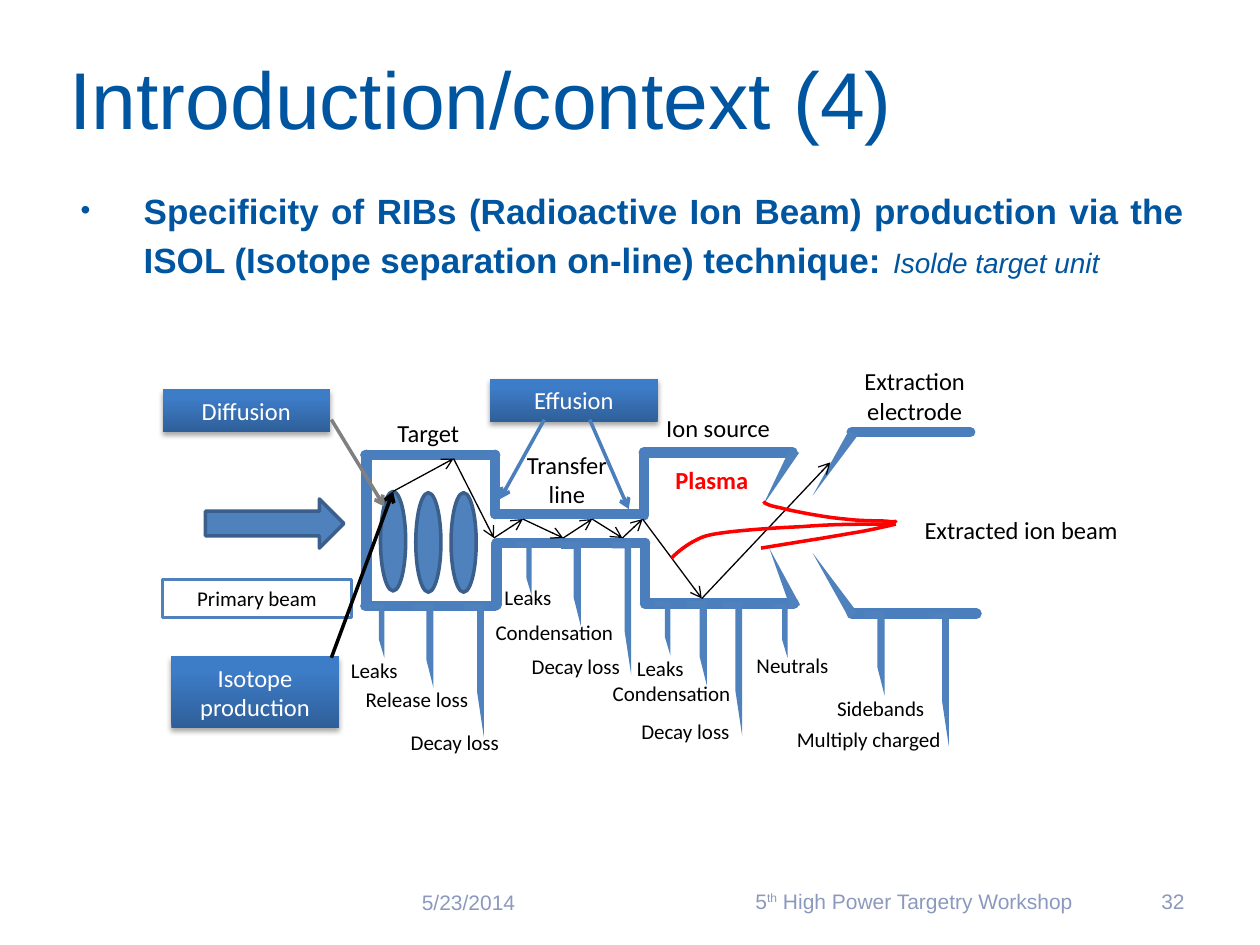
from itertools import pairwise

from pptx import Presentation
from pptx import util as u
from pptx.dml.color import RGBColor
from pptx.enum import shapes, text
from pptx.oxml import parse_xml
from pptx.oxml.ns import nsdecls, qn

COLORS = {
    "title": "0055A0", "footer": "8C99BE", "black": "000000", "white": "FFFFFF",
    "wall": "4B7EBC", "steel": "4F81BD", "edge": "3A5F8C", "beam": "FF0000",
    "gray": "808080", "dark": "2F5F99", "light": "3D7CC7",
}
ALIGN = text.PP_ALIGN
SHAPE = shapes.MSO_SHAPE
LABEL = {"name": "Calibri", "size": u.Pt(14)}
SMALL = {"name": "Calibri", "size": u.Pt(12)}
FOOTER = {"name": "Arial", "size": u.Pt(12)}
LEAKS = {"short": (0.43, 0.13), "medium": (0.67, 0.17), "long": (1.06, 0.16)}


def length(inches):
    return u.Cm(inches * 2.54)


def rgb(name):
    return RGBColor.from_string(COLORS[name])


def curve_points(start, *segments, steps=10):
    points = [start]
    for first, second, end in segments:
        origin = points[-1]
        for step in range(1, steps + 1):
            t = step / steps
            weights = ((1 - t) ** 3, 3 * t * (1 - t) ** 2, 3 * t * t * (1 - t), t ** 3)
            controls = (origin, first, second, end)
            points.append(tuple(sum(w * c[axis] for w, c in zip(weights, controls))
                                for axis in (0, 1)))
    return points


class SlideBuilder:
    def __init__(self, presentation):
        self.slide = presentation.slides.add_slide(presentation.slide_layouts[1])
        self.shapes = self.slide.shapes

    def place(self, shape, box):
        for name, value in zip(("left", "top", "width", "height"), box):
            setattr(shape, name, length(value))

    def style(self, font, color, **values):
        for name, value in values.items():
            setattr(font, name, value)
        font.color.rgb = rgb(color)

    def add_words(self, paragraph, words, color, **values):
        run = paragraph.add_run()
        run.text = words
        self.style(run.font, color, **values)
        return run

    def title(self, words, box):
        shape = self.shapes.title
        self.place(shape, box)
        frame = shape.text_frame
        frame.vertical_anchor = text.MSO_ANCHOR.MIDDLE
        frame.auto_size = text.MSO_AUTO_SIZE.NONE
        for side in ("left", "top", "right", "bottom"):
            setattr(frame, f"margin_{side}", length(0.05))
        frame.paragraphs[0].alignment = ALIGN.LEFT
        self.add_words(frame.paragraphs[0], words, "title", name="Arial", size=u.Pt(46))

    def bullet(self, runs, box):
        shape = self.slide.placeholders[1]
        self.place(shape, box)
        shape.text_frame.auto_size = text.MSO_AUTO_SIZE.NONE
        paragraph = shape.text_frame.paragraphs[0]
        paragraph.alignment = ALIGN.JUSTIFY
        paragraph.space_before = u.Pt(0)
        properties = paragraph._p.get_or_add_pPr()
        properties.set("marL", str(length(0.54)))
        properties.set("indent", str(length(-0.5)))
        for xml in (f'<a:buClr {nsdecls("a")}><a:srgbClr val="{COLORS["title"]}"/></a:buClr>',
                    f'<a:buSzPct {nsdecls("a")} val="80000"/>',
                    f'<a:buFont {nsdecls("a")} typeface="Arial"/>',
                    f'<a:buChar {nsdecls("a")} char="•"/>'):
            properties.append(parse_xml(xml))
        for words, values in runs:
            self.add_words(paragraph, words, "title", name="Arial", **values)

    def label(self, words, box, values, color="black", align=ALIGN.CENTER, middle=False):
        shape = self.shapes.add_textbox(*map(length, box))
        frame = shape.text_frame
        frame.word_wrap = True
        if middle:
            frame.vertical_anchor = text.MSO_ANCHOR.MIDDLE
        frame.paragraphs[0].alignment = align
        self.add_words(frame.paragraphs[0], words, color, **values)
        return frame.paragraphs[0]

    def preset(self, kind, box, fill="steel", line=None, weight=2, rotation=0):
        shape = self.shapes.add_shape(kind, *map(length, box))
        shape.shadow.inherit = False
        shape.rotation = rotation
        if fill:
            shape.fill.solid()
            shape.fill.fore_color.rgb = rgb(fill)
        else:
            shape.fill.background()
        self.outline(shape.line, line, weight)
        return shape

    def outline(self, line, color, weight):
        if color:
            line.color.rgb = rgb(color)
            line.width = u.Pt(weight)
        else:
            line.fill.background()

    def caption(self, shape, words, color, values):
        frame = shape.text_frame
        frame.word_wrap = True
        frame.vertical_anchor = text.MSO_ANCHOR.TOP
        frame.paragraphs[0].alignment = ALIGN.CENTER
        self.add_words(frame.paragraphs[0], words, color, **values)

    def process(self, words, box):
        shape = self.preset(SHAPE.RECTANGLE, box)
        shape.fill.gradient()
        shape.fill.gradient_angle = 90
        for stop, color, position in zip(shape.fill.gradient_stops, ("dark", "light"), (0, 0.8)):
            stop.color.rgb = rgb(color)
            stop.position = position
        shape._element.spPr.find(qn("a:effectLst")).append(parse_xml(
            f'<a:outerShdw {nsdecls("a")} blurRad="{u.Pt(3.1)}" dist="{u.Pt(1.8)}" '
            'dir="5400000" rotWithShape="0"><a:srgbClr val="000000">'
            '<a:alpha val="35000"/></a:srgbClr></a:outerShdw>'))
        self.caption(shape, words, "white", LABEL)

    def line(self, start, end, color, weight, arrow=False):
        connector = self.shapes.add_connector(
            shapes.MSO_CONNECTOR.STRAIGHT, *map(length, start + end))
        self.outline(connector.line, color, weight)
        properties = connector.line._get_or_add_ln()
        if arrow:
            properties.append(parse_xml(f'<a:tailEnd {nsdecls("a")} type="arrow"/>'))
        else:
            properties.set("cap", "rnd")
        connector._element.spPr.append(parse_xml(f'<a:effectLst {nsdecls("a")}/>'))

    def curve(self, points):
        first, *rest = [tuple(map(length, point)) for point in points]
        builder = self.shapes.build_freeform(*first)
        builder.add_line_segments(rest, close=False)
        shape = builder.convert_to_shape()
        shape.shadow.inherit = False
        shape.fill.background()
        self.outline(shape.line, "beam", 2)

    def leak(self, kind, left, top):
        self.preset(SHAPE.HALF_FRAME, (left, top) + LEAKS[kind], rotation=90)


def main():
    presentation = Presentation()
    presentation.slide_width, presentation.slide_height = length(10), length(7.5)
    page = SlideBuilder(presentation)

    page.title("Introduction/context (4)", (0.5, 0.26, 9, 1.03))
    page.bullet([
        ("Specificity of RIBs (Radioactive Ion Beam) production via the ISOL "
         "(Isotope separation on-line) technique:", {"size": u.Pt(20), "bold": True}),
        (" ", {"size": u.Pt(24), "bold": True}),
        ("Isolde target unit ", {"size": u.Pt(16), "bold": False, "italic": True}),
    ], (0.5, 1.45, 9, 5.1))

    page.label("5/23/2014", (3.25, 6.96, 2.33, 0.4), FOOTER, "footer", ALIGN.LEFT, True)
    event = page.label("5", (5.67, 6.95, 3.17, 0.4), FOOTER, "footer", middle=True)
    ordinal = page.add_words(event, "th", "footer", **FOOTER)
    ordinal._r.get_or_add_rPr().set("baseline", "30000")
    page.add_words(event, " High Power Targetry Workshop", "footer", **FOOTER)
    page.label("32", (8.95, 6.95, 0.55, 0.4), FOOTER, "footer", ALIGN.RIGHT, True)

    for left, right, y in ((2.9, 3.93, 4.81), (2.9, 3.93, 3.61), (5.12, 6.3, 4.79),
                           (5.11, 6.29, 3.59), (3.94, 5.12, 4.31), (3.93, 5.11, 4.08),
                           (6.76, 7.75, 4.87), (6.76, 7.7, 3.43)):
        page.line((left, y), (right, y), "wall", 6)
    for x, top, bottom in ((2.91, 3.61, 4.79), (5.11, 3.61, 4.09), (5.12, 4.31, 4.79),
                           (3.93, 3.61, 4.08), (3.94, 4.32, 4.8)):
        page.line((x, top), (x, bottom), "wall", 6)
    for left, top, height, rotation in ((6.57, 4.34, 0.59, 327), (6.17, 4.33, 0.51, 336),
                                        (6.14, 3.54, 0.51, 210), (6.57, 3.39, 0.59, 213)):
        page.preset(SHAPE.ISOSCELES_TRIANGLE, (left, top, 0.08, height), rotation=rotation)

    page.preset(SHAPE.RIGHT_ARROW, (1.63, 3.96, 1.1, 0.39), line="edge")
    primary = page.preset(SHAPE.RECTANGLE, (1.29, 4.6, 1.5, 0.3), None, "steel", 1.75)
    page.caption(primary, "Primary beam", "black", SMALL)
    for left, top in ((3.02, 3.9), (3.3, 3.91), (3.58, 3.91)):
        page.preset(SHAPE.OVAL, (left, top, 0.2, 0.79), line="edge")

    ion_track = ((3.12, 3.9), (3.6, 3.64), (3.92, 4.27), (4.15, 4.12), (4.47, 4.27),
                 (4.7, 4.12), (4.94, 4.27), (5.1, 4.12), (5.57, 4.75), (6.59, 3.67))
    for start, end in pairwise(ion_track):
        page.line(start, end, "black", 0.75, True)

    page.curve(curve_points(
        (6.06, 3.98), ((6.07, 3.99), (6.08, 4.01), (6.19, 4.03)),
        ((6.3, 4.06), (6.57, 4.11), (6.71, 4.12)), ((6.86, 4.14), (7, 4.13), (7.06, 4.14)),
        ((7.13, 4.14), (7.11, 4.14), (7.1, 4.14))))
    page.curve([(6.04, 4.35)] + curve_points(
        (6.41, 4.29), ((6.54, 4.27), (6.71, 4.24), (6.83, 4.22)),
        ((6.94, 4.2), (7.11, 4.16), (7.11, 4.16))))
    page.curve(curve_points(
        (5.33, 4.43), ((5.38, 4.38), (5.43, 4.34), (5.5, 4.3)),
        ((5.56, 4.27), (5.58, 4.25), (5.73, 4.23)), ((5.87, 4.21), (6.14, 4.19), (6.37, 4.18)),
        ((6.6, 4.16), (6.85, 4.16), (7.1, 4.16))))

    for kind, left, top in (
            ("short", 2.77, 4.94), ("medium", 3.02, 5.04), ("long", 3.23, 5.24),
            ("short", 5.04, 4.92), ("medium", 5.19, 5.02), ("long", 5.28, 5.23),
            ("short", 3.94, 4.45), ("medium", 4.19, 4.55), ("long", 4.4, 4.75),
            ("short", 5.97, 4.94), ("medium", 6.6, 5.1), ("long", 6.92, 5.31)):
        page.leak(kind, left, top)

    for words, left, top, width, height in (
            ("Extraction electrode", 6.71, 2.86, 1.1, 0.57),
            ("Extracted ion beam", 7.12, 4.04, 1.97, 0.34), ("Target", 2.85, 3.27, 1.1, 0.34),
            ("Transfer line", 3.95, 3.52, 1.1, 0.57), ("Ion source", 5.15, 3.23, 1.1, 0.34)):
        page.label(words, (left, top, width, height), LABEL)
    page.label("Plasma", (5.1, 3.64, 1.1, 0.34), {**LABEL, "bold": True}, "beam")
    for words, left, top, width in (
            ("Leaks", 2.42, 5.17, 1.1), ("Release loss", 2.76, 5.4, 1.1),
            ("Decay loss", 3.06, 5.74, 1.1), ("Leaks", 4.69, 5.15, 1.1),
            ("Condensation", 4.67, 5.35, 1.32), ("Decay loss", 4.89, 5.65, 1.1),
            ("Leaks", 3.64, 4.59, 1.1), ("Condensation", 3.71, 4.87, 1.38),
            ("Decay loss", 4.02, 5.14, 1.1), ("Neutrals", 5.74, 5.13, 1.1),
            ("Sidebands", 6.44, 5.47, 1.1), ("Multiply charged", 6.16, 5.72, 1.47)):
        page.label(words, (left, top, width, 0.3), SMALL)

    page.process("Isotope production", (1.36, 5.21, 1.33, 0.57))
    page.process("Diffusion", (1.29, 3.09, 1.33, 0.34))
    page.process("Effusion", (3.89, 3.01, 1.33, 0.34))
    for start, end, color in (((4.32, 3.33), (3.97, 3.96), "wall"),
                              ((2.63, 3.33), (3.05, 4.02), "gray"),
                              ((2.63, 5.22), (3.12, 3.9), "black"),
                              ((4.68, 3.33), (4.99, 4.04), "wall")):
        page.line(start, end, color, 2, True)
    presentation.save("out.pptx")


if __name__ == "__main__":
    main()
